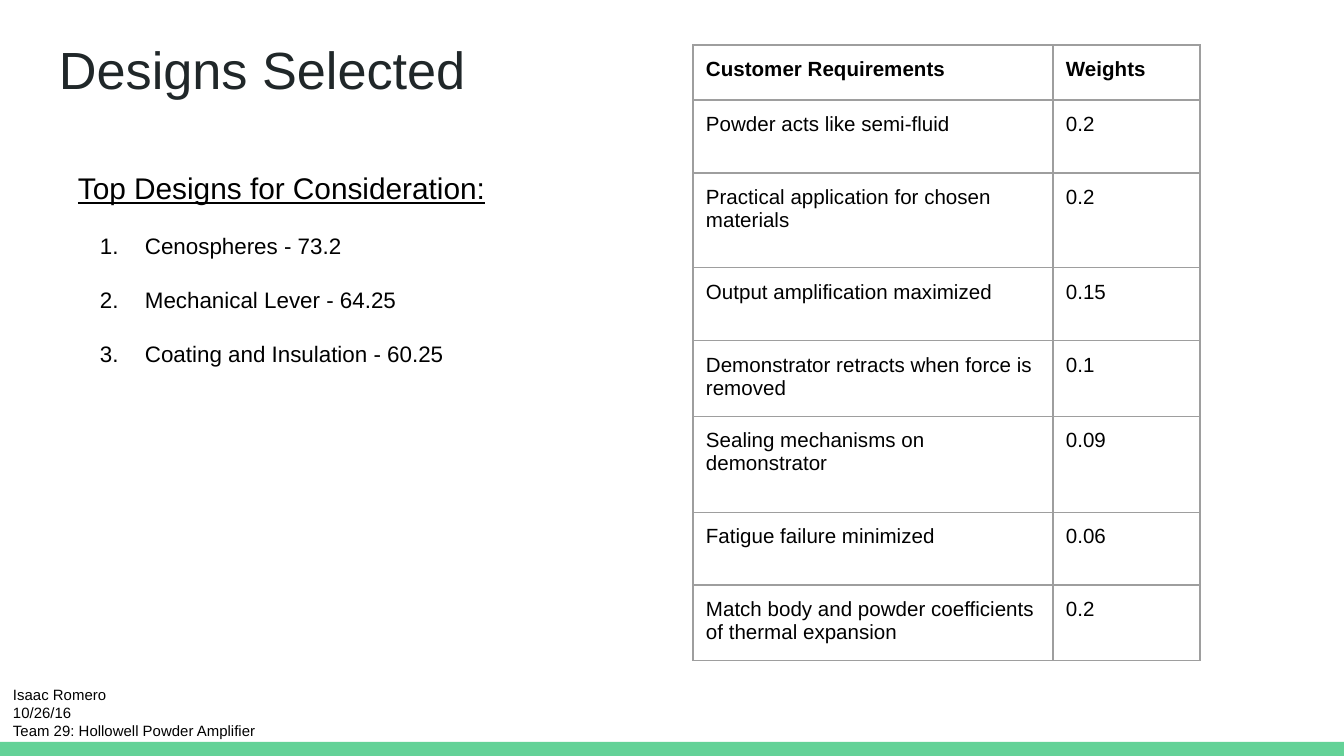
from lxml.etree import SubElement
from pptx import Presentation
from pptx.dml.color import RGBColor
from pptx.enum.shapes import MSO_SHAPE as Shape
from pptx.oxml.ns import qn
from pptx.util import Emu, Pt

TITLE = "Designs Selected"
FOOTER = ["Isaac Romero", "10/26/16", "Team 29: Hollowell Powder Amplifier"]
HEADING = "Top Designs for Consideration:"
DESIGNS = ["Cenospheres - 73.2", "Mechanical Lever - 64.25",
           "Coating and Insulation - 60.25"]
# requirement, weight, row height in px
REQUIREMENTS = [
    ("Customer Requirements", "Weights", 55),
    ("Powder acts like semi-fluid", "0.2", 73),
    ("Practical application for chosen materials", "0.2", 95),
    ("Output amplification maximized", "0.15", 73),
    ("Demonstrator retracts when force is removed", "0.1", 72),
    ("Sealing mechanisms on demonstrator", "0.09", 96),
    ("Fatigue failure minimized", "0.06", 73),
    ("Match body and powder coefficients of thermal expansion", "0.2", 72),
]
COLUMN_WIDTHS = [360, 147]

FONT = "Arial"
BLACK, DARK, GREEN, GREY, WHITE = "000000", "202729", "63D297", "9E9E9E", "FFFFFF"
INSET = 13
PX_PER_INCH = 134.4


def px(length):
    return Emu(round(length * 914400 / PX_PER_INCH))


def color(hex_string):
    return RGBColor.from_string(hex_string)


def add_text(para, text, size, ink=BLACK, bold=False, underline=False):
    span = para.add_run()
    span.text = text
    font = span.font
    font.name, font.size, font.bold, font.underline = FONT, Pt(size), bold, underline
    font.color.rgb = color(ink)


def set_insets(target, top=INSET):
    target.margin_left = target.margin_right = target.margin_bottom = px(INSET)
    target.margin_top = px(top)


def add_box(page, left, top, width, height, top_inset=INSET):
    """Add a wrapping text box and return its text frame."""
    frame = page.shapes.add_textbox(px(left), px(top), px(width), px(height)).text_frame
    frame.word_wrap = True
    set_insets(frame, top_inset)
    return frame


def next_para(frame, index):
    return frame.add_paragraph() if index else frame.paragraphs[0]


def number_para(para):
    props = para._p.get_or_add_pPr()
    props.set("marL", str(px(67)))
    props.set("indent", str(px(-45)))
    SubElement(props, qn("a:buFont"), typeface=FONT)
    SubElement(props, qn("a:buAutoNum"), type="arabicPeriod")


def style_cell(cell):
    set_insets(cell)
    props = cell._tc.get_or_add_tcPr()
    for side in ("lnL", "lnR", "lnT", "lnB"):
        line = SubElement(props, qn(f"a:{side}"), w=str(Pt(0.75)))
        fill = SubElement(line, qn("a:solidFill"))
        SubElement(fill, qn("a:srgbClr"), val=GREY)
    cell.fill.solid()
    cell.fill.fore_color.rgb = color(WHITE)


def add_requirements(page, left, top):
    heights = [row[2] for row in REQUIREMENTS]
    table = page.shapes.add_table(
        len(heights), len(COLUMN_WIDTHS), px(left), px(top),
        px(sum(COLUMN_WIDTHS)), px(sum(heights))).table
    for column, width in zip(table.columns, COLUMN_WIDTHS):
        column.width = px(width)
    for r, (*texts, height) in enumerate(REQUIREMENTS):
        table.rows[r].height = px(height)
        for c, text in enumerate(texts):
            cell = table.cell(r, c)
            style_cell(cell)
            add_text(cell.text_frame.paragraphs[0], text, 11, bold=r == 0)


def main():
    deck = Presentation()
    deck.slide_width, deck.slide_height = px(1344), px(756)
    page = deck.slides.add_slide(deck.slide_layouts[6])

    band = page.shapes.add_shape(Shape.RECTANGLE, 0, px(742), px(1344), px(14))
    band.shadow.inherit = False
    band.fill.solid()
    band.fill.fore_color.rgb = color(GREEN)
    band.line.fill.background()

    title = add_box(page, 46, 17, 1253, 85, top_inset=20)
    add_text(title.paragraphs[0], TITLE, 28, DARK)

    footer = add_box(page, 0, 673, 358, 82)
    for i, text in enumerate(FOOTER):
        add_text(next_para(footer, i), text, 8)

    add_requirements(page, 693, 45)

    designs = add_box(page, 65, 121, 469, 138)
    for i, text in enumerate([HEADING] + DESIGNS):
        para = next_para(designs, i)
        para.line_spacing = 2.0
        if i:
            number_para(para)
        add_text(para, text, 12 if i else 16, underline=i == 0)

    deck.save("out.pptx")


if __name__ == "__main__":
    main()
